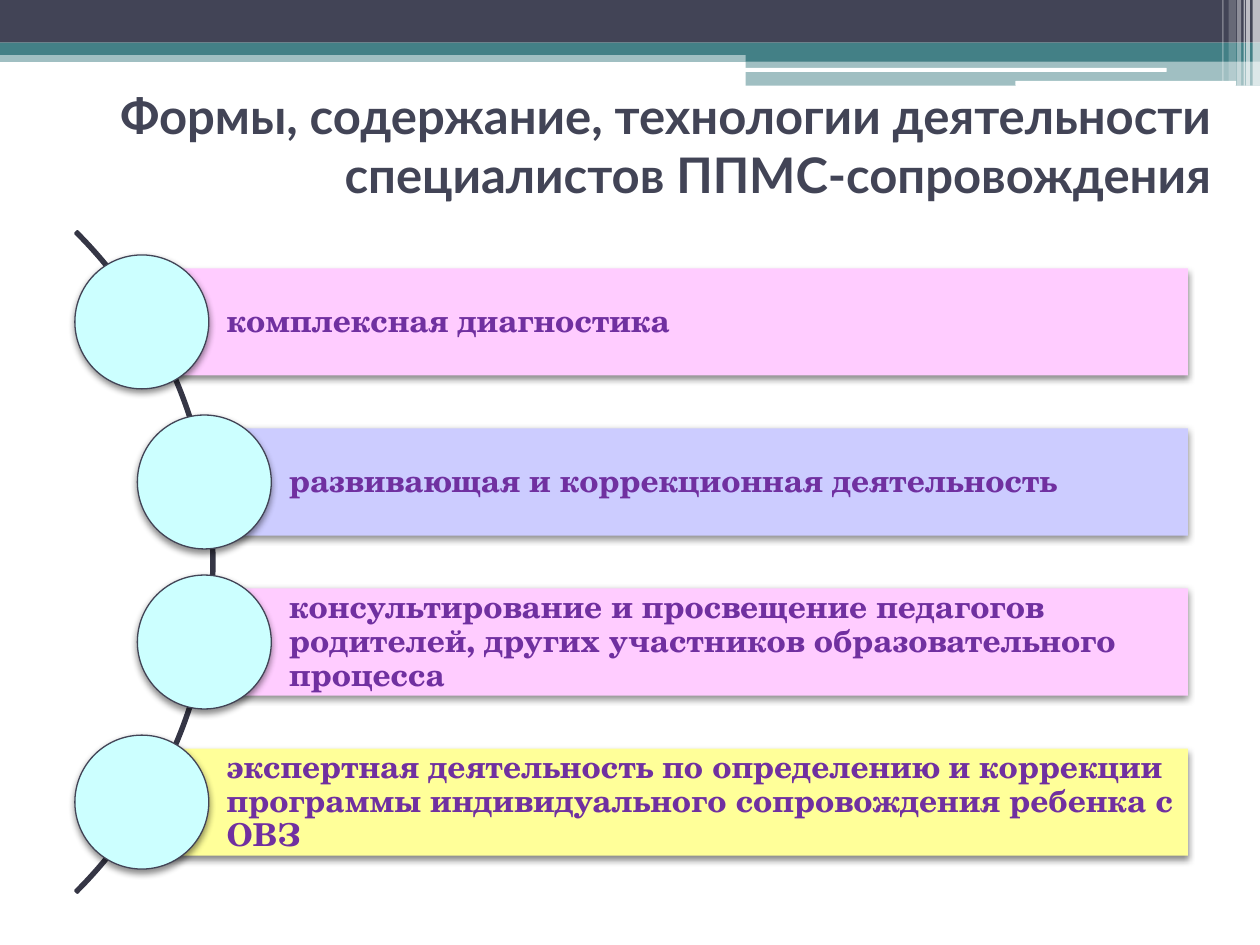
from pptx import Presentation
from pptx.dml.color import RGBColor
from pptx.enum.shapes import MSO_SHAPE
from pptx.enum.text import MSO_ANCHOR, MSO_AUTO_SIZE, PP_ALIGN
from pptx.oxml.ns import qn
from pptx.util import Cm, Pt
from lxml.etree import SubElement

COLORS = {
    "ink": "424456", "teal": "438086", "white": "FFFFFF", "arc": "353645",
    "circle": "CCFFFF", "pink": "FFCCFF", "lilac": "CCCCFF",
    "yellow": "FFFF99", "purple": "7030A0", "shadow": "000000",
}

BANDS = [
    (0, 1.02, 25.4, 0.23, "teal", 50),
    (0, 0, 25.4, 0.86, "ink", 100),
    (0, 0.86, 25.4, 0.25, "teal", 100),
    (15.03, 0.99, 10.37, 0.25, "teal", 100),
    (15.03, 1.23, 10.37, 0.5, "teal", 50),
]
HIGHLIGHTS = [(15.01, 1.37, 8.51, 0.08), (20.47, 1.63, 4.45, 0.1)]
STRIPES = [
    (25.25, 0.15, 1.73, 65), (25.12, 0.08, 1.73, 65), (25.07, 0.03, 1.73, 60),
    (24.94, 0.08, 1.73, 40), (24.77, 0.15, 1.63, 20), (24.64, 0.03, 1.63, 30),
]

ACTIVITIES = [
    ("комплексная диагностика", "pink"),
    ("развивающая и коррекционная деятельность", "lilac"),
    ("консультирование и просвещение педагогов родителей, других участников "
     "образовательного процесса", "pink"),
    ("экспертная деятельность по определению и коррекции программы "
     "индивидуального сопровождения ребенка с ОВЗ", "yellow"),
]


def color(name):
    return RGBColor.from_string(COLORS[name])


def add_block(slide, kind, box, fill=None, opacity=100, line=None, width=0):
    block = slide.shapes.add_shape(kind, *[Cm(length) for length in box])
    block.shadow.inherit = False
    if fill:
        block.fill.solid()
        block.fill.fore_color.rgb = color(fill)
    else:
        block.fill.background()
    if opacity < 100:
        tint = block._element.spPr.find(f".//{qn('a:srgbClr')}")
        SubElement(tint, qn("a:alpha"), val=str(opacity * 1000))
    if line:
        block.line.color.rgb = color(line)
        block.line.width = Pt(width)
    else:
        block.line.fill.background()
    return block


def cast_shadow(block):
    effects = block._element.spPr.find(qn("a:effectLst"))
    shadow = SubElement(effects, qn("a:outerShdw"), blurRad=str(Pt(4)),
                        dist=str(Pt(2)), dir="5400000", rotWithShape="0")
    tint = SubElement(shadow, qn("a:srgbClr"), val=COLORS["shadow"])
    SubElement(tint, qn("a:alpha"), val="45000")


def style_run(run, font, size, tint):
    run.font.name = font
    run.font.size = Pt(size)
    run.font.bold = True
    run.font.color.rgb = color(tint)


def add_header(slide, left, top):
    for x, y, width, height, fill, opacity in BANDS:
        add_block(slide, MSO_SHAPE.RECTANGLE,
                  (left + x, top + y, width, height), fill, opacity)
    for x, y, width, height in HIGHLIGHTS:
        add_block(slide, MSO_SHAPE.ROUNDED_RECTANGLE,
                  (left + x, top + y, width, height), "white")
    for x, width, height, opacity in STRIPES:
        add_block(slide, MSO_SHAPE.RECTANGLE,
                  (left + x, top, width, height), "white", opacity)


def place_title(slide, left, top, width, height):
    title = slide.shapes.title
    title.left, title.top = Cm(left), Cm(top)
    title.width, title.height = Cm(width), Cm(height)
    frame = title.text_frame
    frame.text = "Формы, содержание, технологии деятельности специалистов ППМС-сопровождения"
    frame.word_wrap = True
    frame.auto_size = MSO_AUTO_SIZE.NONE
    frame.vertical_anchor = MSO_ANCHOR.MIDDLE
    heading = frame.paragraphs[0]
    heading.alignment = PP_ALIGN.RIGHT
    style_run(heading.runs[0], "Lato", 28, "ink")


def add_activity(slide, left, top, width, height, text, fill):
    bar = add_block(slide, MSO_SHAPE.RECTANGLE, (left, top, width, height), fill)
    cast_shadow(bar)
    frame = bar.text_frame
    frame.text = text
    frame.word_wrap = True
    frame.vertical_anchor = MSO_ANCHOR.MIDDLE
    frame.margin_left = Cm(1.71)
    frame.margin_top = frame.margin_right = frame.margin_bottom = Cm(0.13)
    activity = frame.paragraphs[0]
    activity.alignment = PP_ALIGN.LEFT
    activity.line_spacing = 0.9
    style_run(activity.runs[0], "TeX Gyre Schola", 18, "purple")

    diameter = height * 1.25
    circle = add_block(
        slide, MSO_SHAPE.OVAL,
        (left - diameter / 2, top + (height - diameter) / 2, diameter, diameter),
        "circle", line="ink", width=0.75)
    cast_shadow(circle)


def add_activities(slide, left, top, width, height):
    arc_size = 18.85
    arc = add_block(
        slide, MSO_SHAPE.BLOCK_ARC,
        (left - 16.05, top + (height - arc_size) / 2, arc_size, arc_size),
        line="arc", width=1.5)
    for index, value in enumerate((189, 27, 0.003)):
        arc.adjustments[index] = value

    bar_height = 2.16
    pitch = (height - bar_height) / (len(ACTIVITIES) - 1)
    for index, (text, fill) in enumerate(ACTIVITIES):
        indent = 1.34 if index in (0, len(ACTIVITIES) - 1) else 2.6
        add_activity(slide, left + indent, top + index * pitch,
                     width - indent, bar_height, text, fill)


def main():
    presentation = Presentation()
    presentation.slide_width, presentation.slide_height = Cm(25.4), Cm(19.05)
    slide = presentation.slides.add_slide(presentation.slide_layouts[5])
    add_header(slide, 0, 0)
    place_title(slide, 0.05, 1.32, 24.61, 3.18)
    add_activities(slide, 1.52, 5.41, 22.43, 11.84)
    presentation.save("out.pptx")


if __name__ == "__main__":
    main()
